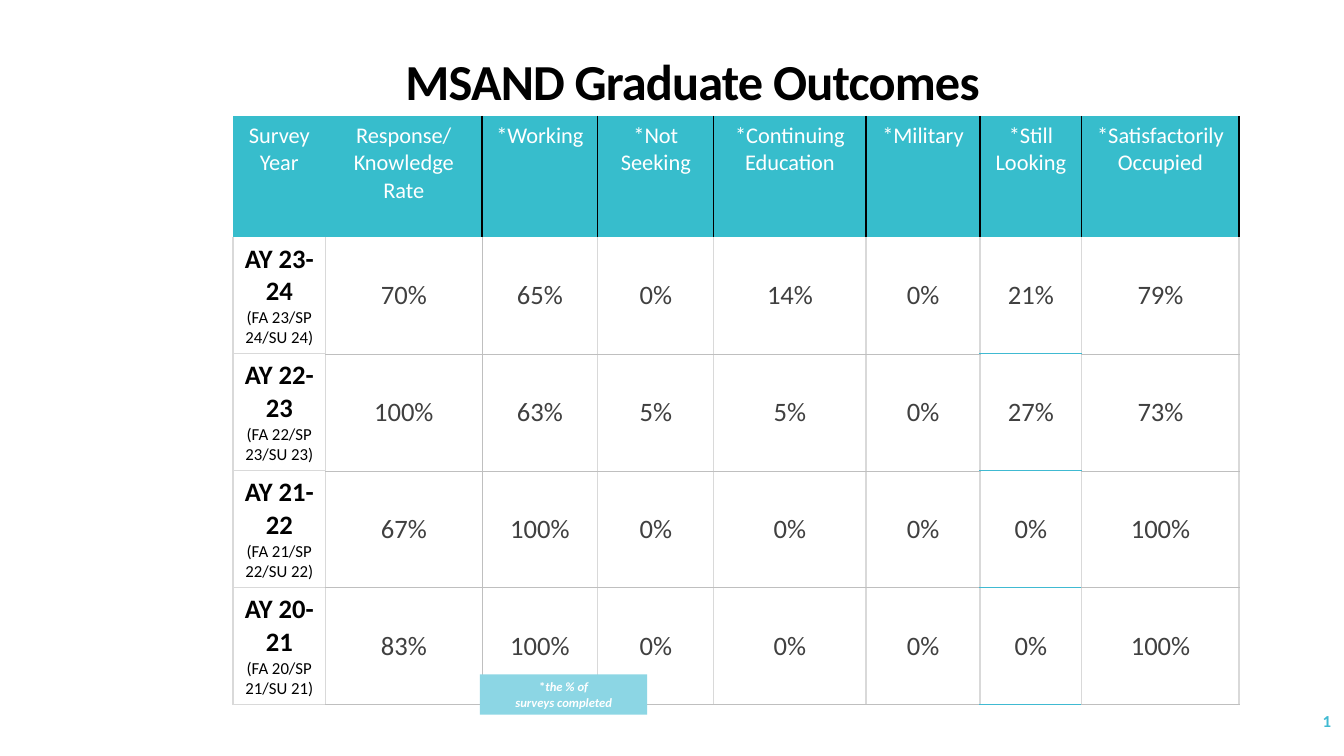
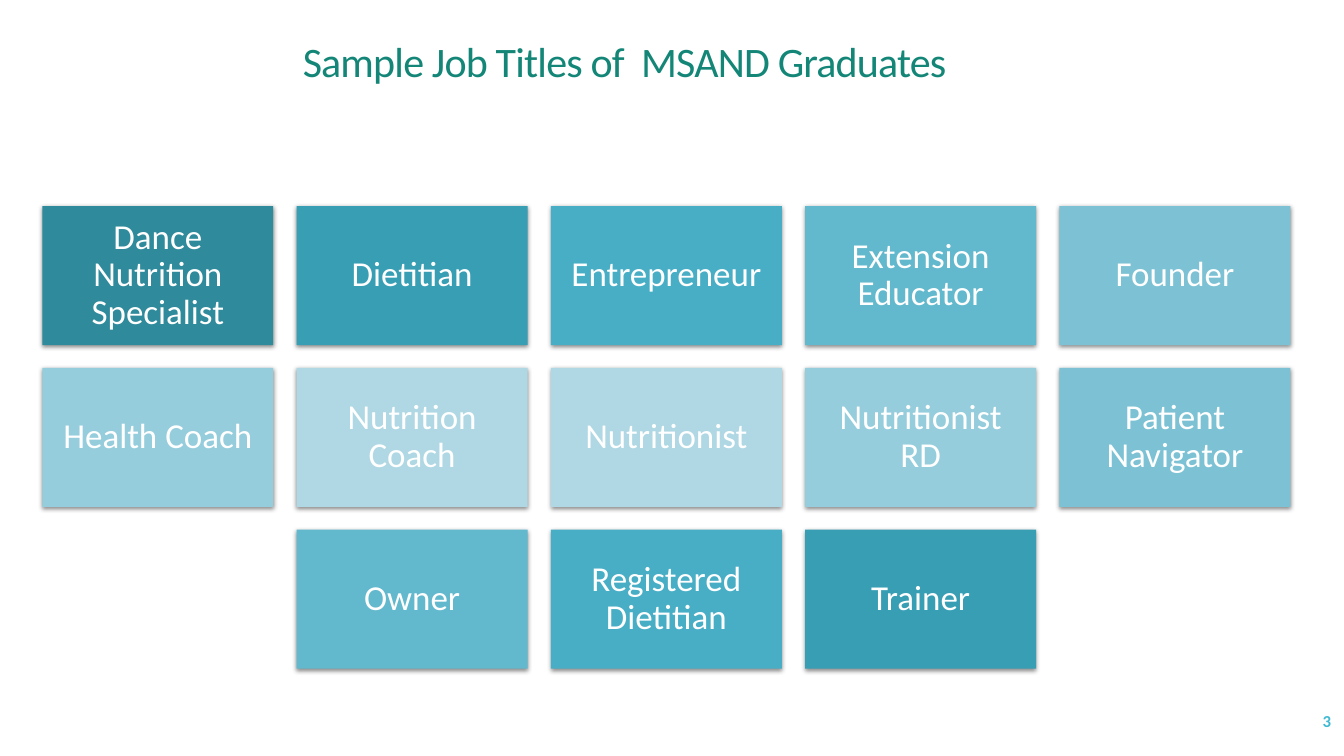
"""Builds two slides on the outcomes and job titles of MSAND graduates."""
from dataclasses import dataclass
from typing import Any, Optional

from lxml.etree import SubElement
from pptx import Presentation
from pptx.dml.color import RGBColor
from pptx.enum.shapes import MSO_SHAPE
from pptx.enum.text import MSO_ANCHOR, PP_ALIGN
from pptx.oxml.ns import qn
from pptx.util import Inches, Pt


@dataclass(frozen=True)
class Theme:
    """Colours, font and type sizes shared by the slides."""
    font: str = "Calibri"
    white: str = "FFFFFF"
    black: str = "000000"
    value: str = "404040"
    accent: str = "40BAD2"
    header: str = "37BDCC"
    note: str = "8CD6E4"
    green: str = "138677"
    rule: str = "D9D9D9"
    hairline: str = "BFBFBF"
    ramp: tuple[str, ...] = ("2F8A9B", "389EB4", "48AEC5", "62B8CC",
                             "7CC2D4", "96CDDC", "AFD8E4")
    large_title: float = 36
    title: float = 30
    tile: float = 25
    body: float = 19
    heading: float = 16
    small: float = 12
    tiny: float = 9


@dataclass(frozen=True)
class Box:
    """A rectangle in percent of the slide's width and height."""
    left: float
    top: float
    width: float
    height: float

    def place(self) -> tuple[int, int, int, int]:
        """Return the rectangle in slide units."""
        return (int(WIDTH * self.left / 100), int(HEIGHT * self.top / 100),
                int(WIDTH * self.width / 100), int(HEIGHT * self.height / 100))


@dataclass(frozen=True)
class Grid:
    """Equal cells at a fixed pitch, starting from the first cell."""
    first: Box
    column_pitch: float
    row_pitch: float

    def cell(self, column: float, row: float) -> Box:
        """Return the cell at a column and row."""
        return Box(self.first.left + column * self.column_pitch,
                   self.first.top + row * self.row_pitch,
                   self.first.width, self.first.height)


@dataclass(frozen=True)
class Span:
    """A piece of text in one format."""
    text: str
    size: float
    color: str
    bold: bool = False
    italic: bool = False
    tracking: float = 0


@dataclass(frozen=True)
class Border:
    """A cell border."""
    color: str
    width: float


@dataclass(frozen=True)
class Outcome:
    """One survey year and its percentages."""
    year: str
    terms: str
    rates: tuple[int, ...]


Para = tuple[Span, ...]

THEME = Theme()
WIDTH, HEIGHT = Inches(13.33), Inches(7.5)
SIDE_MARGIN = Inches(0.11)
NUMBER_BOX = Box(87.25, 92.67, 12.53, 5.33)
TABLE_BOX = Box(17.33, 15.33, 74.87, 77.87)
COLUMN_SHARES = (0.92, 1.55, 1.15, 1.15, 1.51, 1.13, 1.01, 1.56)
ROW_SHARES = (1.2, 1.16, 1.16, 1.16, 1.16)
LOOKING_COLUMN = 6
TILES = Grid(Box(3.15, 27.25, 17.18, 18.4), 18.92, 21.4)
TILE_COLUMNS = 5

HEADINGS = (("Survey Year",), ("Response/", "Knowledge", "Rate"), ("*Working",),
            ("*Not", "Seeking"), ("*Continuing Education",), ("*Military",),
            ("*Still Looking",), ("*Satisfactorily", "Occupied"))
OUTCOMES = (
    Outcome("AY 23-24", "(FA 23/SP 24/SU 24)", (70, 65, 0, 14, 0, 21, 79)),
    Outcome("AY 22-23", "(FA 22/SP 23/SU 23)", (100, 63, 5, 5, 0, 27, 73)),
    Outcome("AY 21-22", "(FA 21/SP 22/SU 22)", (67, 100, 0, 0, 0, 0, 100)),
    Outcome("AY 20-21", "(FA 20/SP 21/SU 21)", (83, 100, 0, 0, 0, 0, 100)),
)
JOBS = ("Dance Nutrition Specialist", "Dietitian", "Entrepreneur",
        "Extension Educator", "Founder", "Health Coach", "Nutrition Coach",
        "Nutritionist", "Nutritionist RD", "Patient Navigator", "Owner",
        "Registered Dietitian", "Trainer")


def assign(target: Any, values: dict[str, Any]) -> None:
    """Set each named attribute of the target."""
    for name, value in values.items():
        setattr(target, name, value)


def write(frame: Any, paras: list[Para], **layout: Any) -> None:
    """Fill a text frame with paragraphs that share one layout."""
    for index, spans in enumerate(paras):
        para = frame.paragraphs[0] if index == 0 else frame.add_paragraph()
        assign(para, {"alignment": PP_ALIGN.CENTER, **layout})
        for span in spans:
            run = para.add_run()
            run.text = span.text
            assign(run.font, {"name": THEME.font, "size": Pt(span.size),
                              "bold": span.bold, "italic": span.italic})
            run.font.color.rgb = RGBColor.from_string(span.color)
            if span.tracking:
                run.font._element.set("spc", str(int(span.tracking * 100)))


def add_text(page: Any, box: Box, span: Span, anchor: MSO_ANCHOR,
             **layout: Any) -> None:
    """Add a wrapped one-line text box."""
    frame = page.shapes.add_textbox(*box.place()).text_frame
    assign(frame, {"word_wrap": True, "vertical_anchor": anchor})
    write(frame, [(span,)], **layout)


def add_title(page: Any, box: Box, span: Span, anchor: MSO_ANCHOR) -> None:
    """Add a slide title."""
    add_text(page, box, span, anchor, line_spacing=0.9)


def add_number(page: Any, number: str) -> None:
    """Add the slide number in the bottom right corner."""
    add_text(page, NUMBER_BOX, Span(number, THEME.small, THEME.accent, bold=True),
             MSO_ANCHOR.MIDDLE, alignment=PP_ALIGN.RIGHT, space_after=Pt(6))


def add_panel(page: Any, box: Box, color: str, paras: list[Para],
              **layout: Any) -> Any:
    """Add a flat filled rectangle with centred text."""
    panel = page.shapes.add_shape(MSO_SHAPE.RECTANGLE, *box.place())
    panel.shadow.inherit = False
    panel.fill.solid()
    panel.fill.fore_color.rgb = RGBColor.from_string(color)
    panel.line.fill.background()
    assign(panel.text_frame, {"word_wrap": True, "margin_left": SIDE_MARGIN,
                              "margin_right": SIDE_MARGIN,
                              "vertical_anchor": MSO_ANCHOR.MIDDLE})
    write(panel.text_frame, paras, **layout)
    return panel


def add_shadow(panel: Any) -> None:
    """Give a panel a soft shadow below it."""
    effects = panel._element.spPr.find(qn("a:effectLst"))
    shadow = SubElement(effects, qn("a:outerShdw"), blurRad=str(Pt(3.5)),
                        dist=str(Pt(1.1)), dir="5400000", rotWithShape="0")
    color = SubElement(shadow, qn("a:srgbClr"), val=THEME.black)
    SubElement(color, qn("a:alpha"), val="45000")


def vertical_border(row: int, edge: int) -> Optional[Border]:
    """Return the border on a column edge, counted from the left."""
    if row == 0:
        return Border(THEME.black, 1) if edge > 1 else None
    return Border(THEME.hairline, 0.25) if edge == 2 else Border(THEME.rule, 1)


def horizontal_border(edge: int, column: int) -> Optional[Border]:
    """Return the border on a row edge, counted from the top."""
    if edge < 2:
        return None
    special = {0: Border(THEME.rule, 1), LOOKING_COLUMN: Border(THEME.accent, 1)}
    return special.get(column, Border(THEME.hairline, 0.25))


def set_borders(cell: Any, row: int, column: int) -> None:
    """Draw the four borders of a table cell."""
    borders = {"a:lnL": vertical_border(row, column),
               "a:lnR": vertical_border(row, column + 1),
               "a:lnT": horizontal_border(row, column),
               "a:lnB": horizontal_border(row + 1, column)}
    properties = cell._tc.get_or_add_tcPr()
    for tag, border in borders.items():
        if border is None:
            SubElement(SubElement(properties, qn(tag), w="0"), qn("a:noFill"))
            continue
        line = SubElement(properties, qn(tag), w=str(Pt(border.width)))
        fill = SubElement(line, qn("a:solidFill"))
        SubElement(fill, qn("a:srgbClr"), val=border.color)


def table_rows() -> list[list[list[Para]]]:
    """Return the paragraphs of every cell, row by row."""
    rows = [[[(Span(line, THEME.heading, THEME.white),) for line in lines]
             for lines in HEADINGS]]
    for outcome in OUTCOMES:
        year = [(Span(outcome.year, THEME.body, THEME.black, bold=True),),
                (Span(outcome.terms, THEME.small, THEME.black),)]
        rows.append([year] + [[(Span(f"{rate}%", THEME.body, THEME.value),)]
                              for rate in outcome.rates])
    return rows


def add_outcome_table(page: Any) -> None:
    """Add the table of graduate outcomes."""
    rows = table_rows()
    place = TABLE_BOX.place()
    table = page.shapes.add_table(len(rows), len(HEADINGS), *place).table
    assign(table, {"first_row": False, "horz_banding": False})
    for column, share in zip(table.columns, COLUMN_SHARES):
        column.width = int(place[2] * share / sum(COLUMN_SHARES))
    for row, share in zip(table.rows, ROW_SHARES):
        row.height = int(place[3] * share / sum(ROW_SHARES))
    for row_index, row_cells in enumerate(rows):
        is_header = row_index == 0
        for column_index, paras in enumerate(row_cells):
            cell = table.cell(row_index, column_index)
            assign(cell, {
                "margin_left": SIDE_MARGIN, "margin_right": SIDE_MARGIN,
                "margin_top": Inches(0.06), "margin_bottom": Inches(0.06),
                "vertical_anchor": MSO_ANCHOR.TOP if is_header else MSO_ANCHOR.MIDDLE})
            set_borders(cell, row_index, column_index)
            cell.fill.solid()
            cell.fill.fore_color.rgb = RGBColor.from_string(
                THEME.header if is_header else THEME.white)
            write(cell.text_frame, paras)


def build_outcomes(page: Any) -> None:
    """Build the slide with the outcome table."""
    add_number(page, "1")
    add_title(page, Box(9.6, 1.6, 83.87, 13.73),
              Span("MSAND Graduate Outcomes", THEME.large_title, THEME.black,
                   bold=True, tracking=-0.6), MSO_ANCHOR.BOTTOM)
    add_outcome_table(page)
    star = Span("*", THEME.tiny, THEME.white, bold=True)
    lines = [Span(text, THEME.tiny, THEME.white, bold=True, italic=True)
             for text in ("the % of", "surveys completed")]
    add_panel(page, Box(35.71, 89.2, 12.45, 5.33), THEME.note,
              [(star, lines[0]), (lines[1],)])


def build_jobs(page: Any) -> None:
    """Build the slide with the job title tiles."""
    add_number(page, "3")
    add_title(page, Box(0, 5.33, 92.95, 6.27),
              Span("Sample Job Titles of  MSAND Graduates", THEME.title,
                   THEME.green, tracking=-0.6), MSO_ANCHOR.MIDDLE)
    for index, job in enumerate(JOBS):
        row, column = divmod(index, TILE_COLUMNS)
        row_count = min(TILE_COLUMNS, len(JOBS) - row * TILE_COLUMNS)
        indent = (TILE_COLUMNS - row_count) / 2
        color = THEME.ramp[min(index, len(JOBS) - index)]
        tile = add_panel(page, TILES.cell(column + indent, row), color,
                         [(Span(job, THEME.tile, THEME.white),)], line_spacing=0.9)
        add_shadow(tile)


def main() -> None:
    """Build the deck and save it."""
    deck = Presentation()
    assign(deck, {"slide_width": WIDTH, "slide_height": HEIGHT})
    for build in (build_outcomes, build_jobs):
        build(deck.slides.add_slide(deck.slide_layouts[6]))
    deck.save("out.pptx")


if __name__ == "__main__":
    main()
